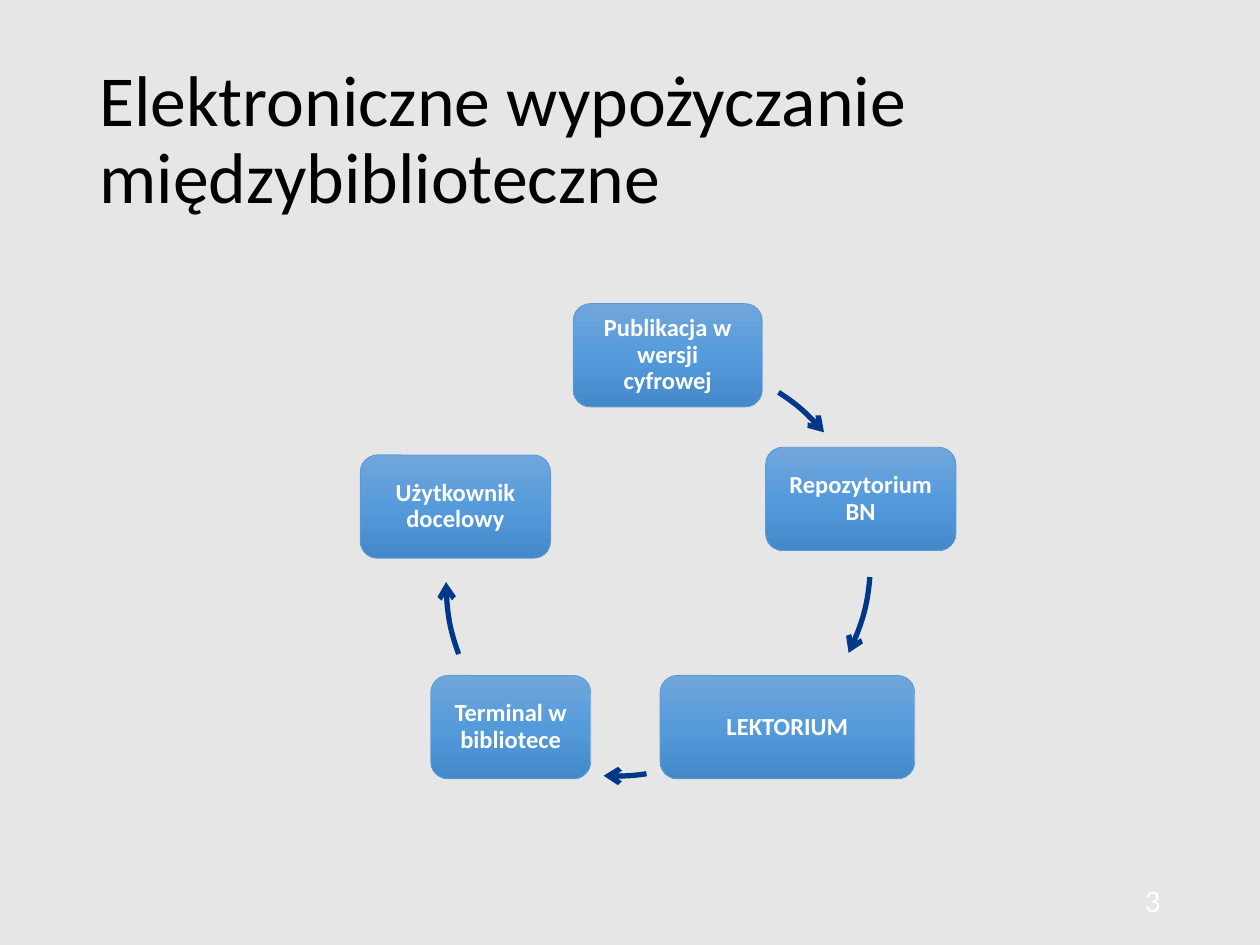
"""Build the slide on electronic interlibrary lending as a cycle of five steps."""
from copy import deepcopy

from lxml.etree import SubElement
from pptx import Presentation
from pptx.dml.color import RGBColor
from pptx.enum.shapes import MSO_SHAPE as Preset
from pptx.enum.text import MSO_ANCHOR as Anchor, PP_ALIGN as Align
from pptx.oxml.ns import qn
from pptx.util import Pt

BACKGROUND = RGBColor(0xE7, 0xE6, 0xE6)
BLACK = RGBColor(0x00, 0x00, 0x00)
WHITE = RGBColor(0xFF, 0xFF, 0xFF)
ARROW_BLUE = RGBColor(0x00, 0x38, 0x88)
OUTLINE_BLUE = RGBColor(0x5B, 0x9B, 0xD5)
GRADIENT = [
    (0, RGBColor(0x71, 0xA6, 0xDB)),
    (0.5, RGBColor(0x55, 0x9B, 0xDB)),
    (1, RGBColor(0x44, 0x8A, 0xCA)),
]

STEP_HEIGHT = 59
STEPS = [
    ("Publikacja w wersji cyfrowej", 327.6, 173.5, 108),
    ("Repozytorium BN", 437.5, 255.6, 108.7),
    ("LEKTORIUM", 377.2, 386, 145.5),
    ("Terminal w bibliotece", 246.2, 386, 91.4),
    ("Użytkownik docelowy", 205.9, 260, 108.7),
]
CIRCLE_SIZE = 236.9
ARROWS = [
    (262.1, 205.2, 302.9, 319.7),
    (260.6, 201.6, 4.7, 26.6),
    (233.3, 206.6, 81.4, 93.3),
    (254.9, 214.6, 159.9, 180.2),
]
ADJUSTMENT_PER_DEGREE = 0.6

TITLE_FORMAT = {"size": Pt(41), "bold": False}
STEP_FORMAT = {"size": Pt(14), "bold": True}
NUMBER_FORMAT = {"size": Pt(18), "bold": False}


def write_text(shape, text, color, alignment, font_format):
    frame = shape.text_frame
    frame.word_wrap = True
    frame.vertical_anchor = Anchor.MIDDLE
    paragraph = frame.paragraphs[0]
    paragraph.text = text
    paragraph.alignment = alignment
    paragraph.line_spacing = 0.9
    font = paragraph.runs[0].font
    font.name = "Calibri"
    font.color.rgb = color
    for name, value in font_format.items():
        setattr(font, name, value)


presentation = Presentation()
presentation.slide_width = Pt(720)
presentation.slide_height = Pt(540)
slide = presentation.slides.add_slide(presentation.slide_layouts[6])
slide.background.fill.solid()
slide.background.fill.fore_color.rgb = BACKGROUND

title = slide.shapes.add_textbox(Pt(49.7), Pt(28.8), Pt(620.6), Pt(104.4))
write_text(title, "Elektroniczne wypożyczanie międzybiblioteczne", BLACK, Align.LEFT, TITLE_FORMAT)

for text, left, top, width in STEPS:
    step = slide.shapes.add_shape(
        Preset.ROUNDED_RECTANGLE, Pt(left), Pt(top), Pt(width), Pt(STEP_HEIGHT)
    )
    step.shadow.inherit = False
    step.fill.gradient()
    step.fill.gradient_angle = 270
    stop_list = step._element.spPr.find(qn("a:gradFill")).find(qn("a:gsLst"))
    stop_list.append(deepcopy(stop_list[0]))
    for stop, (position, color) in zip(step.fill.gradient_stops, GRADIENT):
        stop.position = position
        stop.color.rgb = color
    step.line.color.rgb = OUTLINE_BLUE
    step.line.width = Pt(0.5)
    write_text(step, text, WHITE, Align.CENTER, STEP_FORMAT)

for left, top, start, end in ARROWS:
    arrow = slide.shapes.add_shape(
        Preset.ARC, Pt(left), Pt(top), Pt(CIRCLE_SIZE), Pt(CIRCLE_SIZE)
    )
    arrow.shadow.inherit = False
    arrow.adjustments[0] = start * ADJUSTMENT_PER_DEGREE
    arrow.adjustments[1] = end * ADJUSTMENT_PER_DEGREE
    arrow.fill.background()
    arrow.line.color.rgb = ARROW_BLUE
    arrow.line.width = Pt(3)
    SubElement(arrow.line._get_or_add_ln(), qn("a:tailEnd"), type="arrow")

number = slide.shapes.add_textbox(Pt(508), Pt(501), Pt(162.3), Pt(29))
write_text(number, "3", WHITE, Align.RIGHT, NUMBER_FORMAT)

presentation.save("out.pptx")
